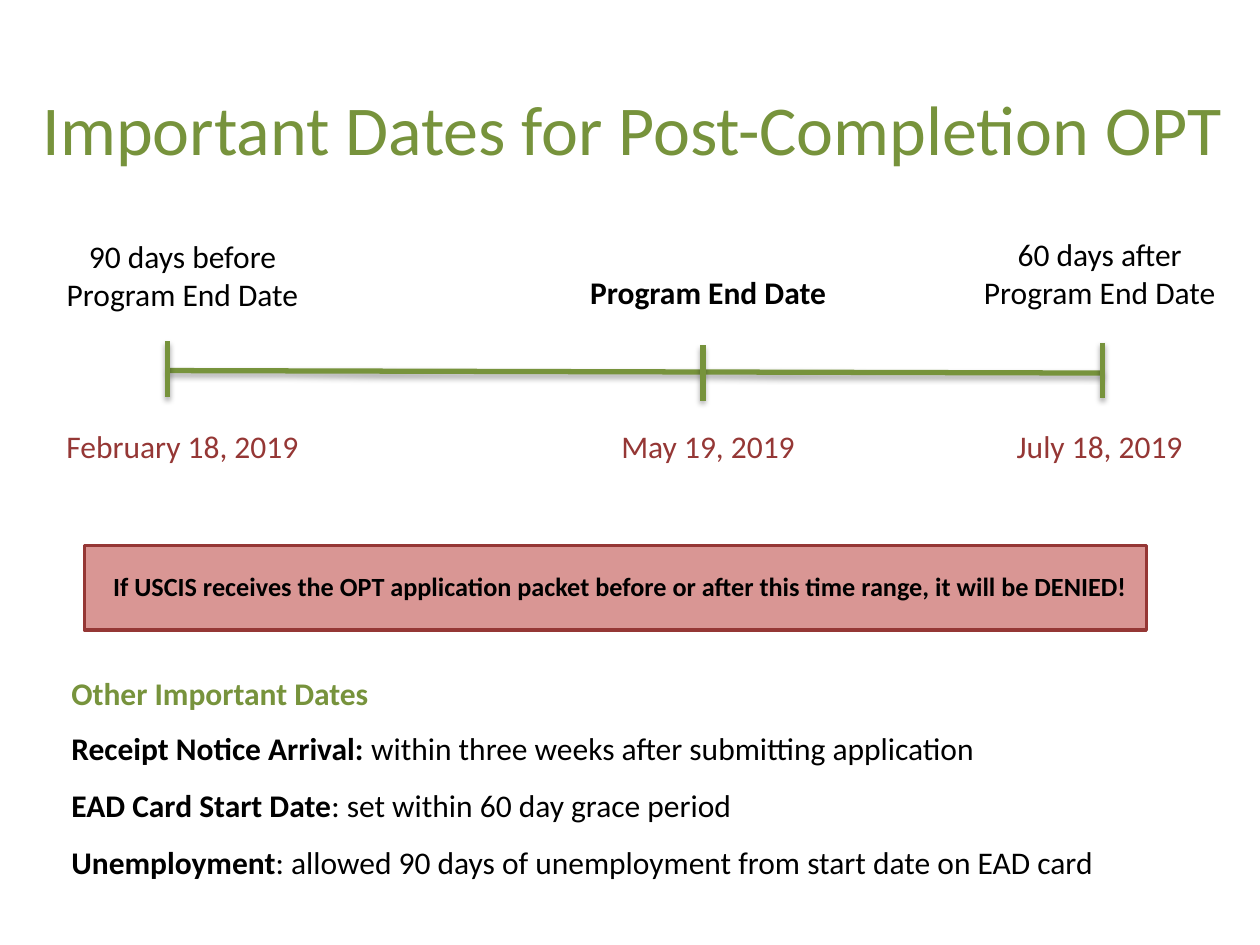
from dataclasses import dataclass
from lxml.etree import SubElement as Sub
from pptx import Presentation
from pptx.dml.color import RGBColor as Rgb
from pptx.enum.shapes import MSO_CONNECTOR as Link, MSO_SHAPE as Shape
from pptx.enum.text import MSO_AUTO_SIZE as Fit, PP_ALIGN as Align
from pptx.oxml.ns import qn
from pptx.util import Cm, Pt


@dataclass(frozen=True)
class Theme:
    font: str = "Calibri"
    green: Rgb = Rgb(0x77, 0x93, 0x3C)
    red: Rgb = Rgb(0x95, 0x37, 0x35)
    pink: Rgb = Rgb(0xD9, 0x96, 0x94)
    black: Rgb = Rgb(0, 0, 0)
    title: int = 40
    text: int = 18
    note: int = 15


theme = Theme()
deck = Presentation()
deck.slide_width, deck.slide_height = Cm(25.4), Cm(19.05)
slide = deck.slides.add_slide(deck.slide_layouts[6])
shapes = slide.shapes


def write(text, x, y, w, h, size=theme.text, color=theme.black, bold=False, align=Align.CENTER):
    frame = shapes.add_textbox(Cm(x), Cm(y), Cm(w), Cm(h)).text_frame
    frame.word_wrap = True
    frame.auto_size = Fit.SHAPE_TO_FIT_TEXT
    frame.text = text
    for para in frame.paragraphs:
        para.alignment = align
        for run in para.runs:
            font = run.font
            font.name, font.size, font.bold = theme.font, Pt(size), bold
            font.color.rgb = color
    return frame


def draw(x1, y1, x2, y2):
    line = shapes.add_connector(Link.STRAIGHT, Cm(x1), Cm(y1), Cm(x2), Cm(y2))
    line.line.color.rgb = theme.green
    line.line.width = Pt(3)
    glow = Sub(line._element.spPr, qn("a:effectLst"))
    shade = Sub(glow, qn("a:outerShdw"), blurRad=str(Pt(3.1)), dist=str(Pt(1.8)),
                dir="5400000", rotWithShape="0")
    tone = Sub(shade, qn("a:srgbClr"), val="000000")
    Sub(tone, qn("a:alpha"), val="35000")


write("Important Dates for Post-Completion OPT", 0.3, 1.6, 24.89, 1.96, theme.title, theme.green)

draw(3.38, 7.47, 22.23, 7.52)
stops = [
    ("90 days before\nProgram End Date", "February 18, 2019", 0.3, 6.76, 4.65, 3.38, 6.88, False),
    ("Program End Date", "May 19, 2019", 11.43, 5.69, 5.38, 14.17, 6.96, True),
    ("60 days after\nProgram End Date", "July 18, 2019", 19.53, 5.28, 4.62, 22.23, 6.91, False),
]
for label, date, left, width, top, tick, start, bold in stops:
    draw(tick, start, tick, start + 1.12)
    write(label, left, top, width, 1.02 if bold else 1.8, bold=bold)
    write(date, left, 8.48, width, 1.02, color=theme.red)

banner = shapes.add_shape(Shape.RECTANGLE, Cm(1.7), Cm(11), Cm(21.41), Cm(1.7))
banner.shadow.inherit = False
banner.fill.solid()
banner.fill.fore_color.rgb = theme.pink
banner.line.color.rgb = theme.red
banner.line.width = Pt(2)
write("If USCIS receives the OPT application packet before or after this time range, it will be DENIED!",
      1.96, 11.38, 21.08, 0.89, theme.note, bold=True)

write("Other Important Dates", 1.19, 13.46, 7.26, 1.02, color=theme.green, bold=True, align=Align.LEFT)
facts = [
    ("Receipt Notice Arrival: ", "within three weeks after submitting application"),
    ("EAD Card Start Date", ": set within 60 day grace period"),
    ("Unemployment", ": allowed 90 days of unemployment from start date on EAD card"),
]
heads = "\n".join(head for head, rest in facts)
body = write(heads, 1.19, 14.2, 23.19, 3.71, bold=True, align=Align.LEFT)
for para, (head, rest) in zip(body.paragraphs, facts):
    para.line_spacing = 1.5
    run = para.add_run()
    run.text = rest
    run.font.name, run.font.size, run.font.bold = theme.font, Pt(theme.text), False
    run.font.color.rgb = theme.black

deck.save("out.pptx")
